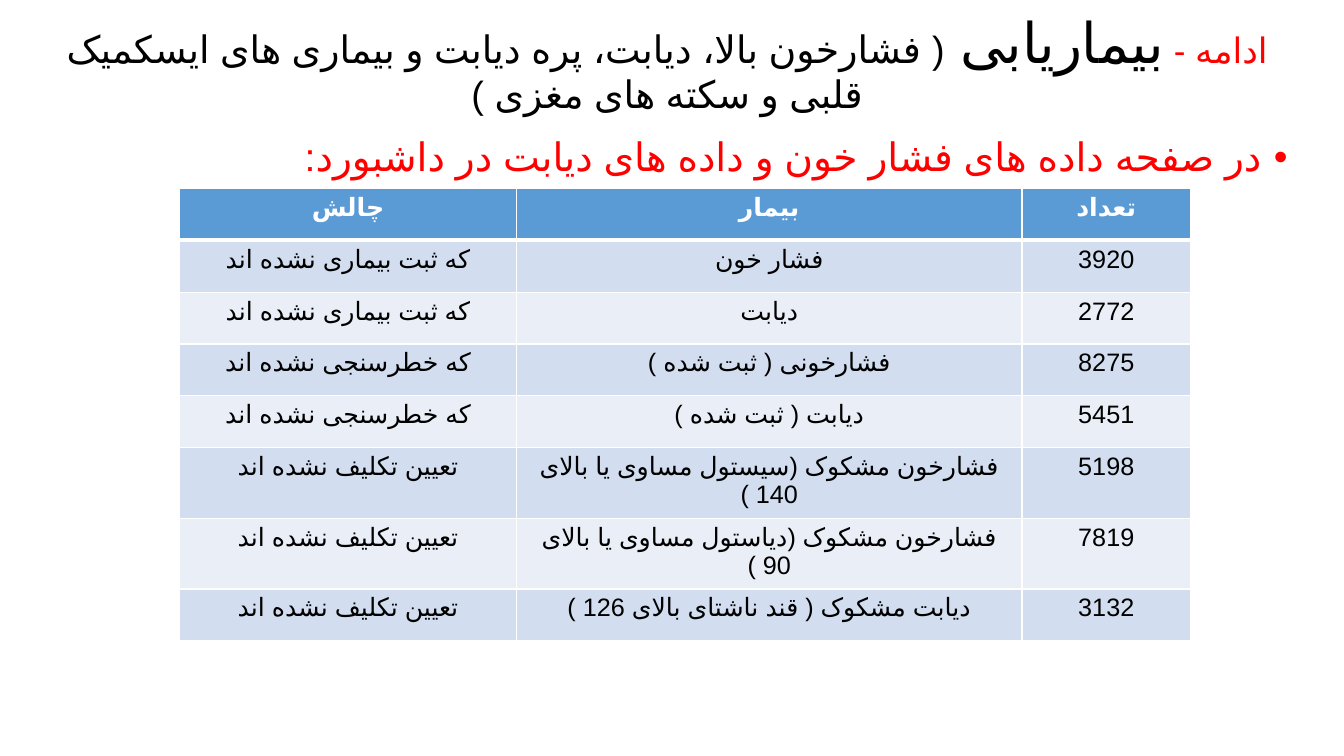
from dataclasses import dataclass
from lxml.etree import SubElement as Sub
from pptx import Presentation
from pptx.dml.color import RGBColor as RGB
from pptx.enum.text import MSO_ANCHOR as Anchor, PP_ALIGN as Align
from pptx.oxml.ns import qn
from pptx.util import Pt


@dataclass(frozen=True)
class Theme:
    """Colours, fonts, language and type sizes of the slide."""
    font: str = "Calibri"
    script: str = "Arial"
    lang: str = "fa-IR"
    red: str = "FF0000"
    black: str = "000000"
    white: str = "FFFFFF"
    head: str = "5B9BD5"
    bands: tuple = ("D2DEEF", "EAEFF7")
    lead: int = 25
    title: int = 40
    note: int = 27
    body: int = 28
    cell: int = 18


LOOK = Theme()
WIDE, HIGH = 960, 540
TITLE = (
    ("ادامه - ", LOOK.lead, LOOK.red),
    ("بیماریابی ", LOOK.title, LOOK.black),
    ("( فشارخون بالا، دیابت، پره دیابت و بیماری های ایسکمیک قلبی و سکته های مغزی )",
     LOOK.note, LOOK.black),
)
POINT = "در صفحه داده های فشار خون و داده های دیابت در داشبورد:"
SIGN, RISK, DUTY = ("که ثبت بیماری نشده اند", "که خطرسنجی نشده اند",
                    "تعیین تکلیف نشده اند")
ROWS = (
    ("چالش", "بیمار", "تعداد"),
    (SIGN, "فشار خون", "3920"),
    (SIGN, "دیابت", "2772"),
    (RISK, "فشارخونی ( ثبت شده )", "8275"),
    (RISK, "دیابت ( ثبت شده )", "5451"),
    (DUTY, "فشارخون مشکوک (سیستول مساوی یا بالای 140 )", "5198"),
    (DUTY, "فشارخون مشکوک (دیاستول مساوی یا بالای 90 )", "7819"),
    (DUTY, "دیابت مشکوک ( قند ناشتای بالای 126 )", "3132"),
)
SHARES = (2, 3, 1)


def style(font, size, color, bold=False):
    """Set the faces, language, size, colour and weight of a font."""
    font.name, font.size, font.bold = LOOK.font, Pt(size), bold
    font.color.rgb = RGB.from_string(color)
    font._rPr.set("lang", LOOK.lang)
    Sub(font._rPr, qn("a:cs"), typeface=LOOK.script)


def add_box(slide, box, anchor):
    """Add a wrapping text box and return its first paragraph."""
    frame = slide.shapes.add_textbox(*map(Pt, box)).text_frame
    frame.word_wrap, frame.vertical_anchor = True, anchor
    para = frame.paragraphs[0]
    para.line_spacing = 0.9
    return para


def add_title(slide, box):
    """Place the centred title with its three sizes of type."""
    para = add_box(slide, box, Anchor.MIDDLE)
    para.alignment = Align.CENTER
    for text, size, color in TITLE:
        run = para.add_run()
        run.text = text
        style(run.font, size, color)


def add_point(slide, box):
    """Place the right-to-left bullet line."""
    para = add_box(slide, box, Anchor.TOP)
    para.text, para.alignment, para.space_before = POINT, Align.RIGHT, Pt(10)
    style(para.font, LOOK.body, LOOK.red)
    props = para._p.get_or_add_pPr()
    for key, value in (("rtl", "1"), ("marL", Pt(18)), ("marR", "0"), ("indent", -Pt(18))):
        props.set(key, str(value))
    face = props.makeelement(qn("a:buFont"), {"typeface": "Arial"})
    mark = props.makeelement(qn("a:buChar"), {"char": "•"})
    spot = list(props).index(props.find(qn("a:defRPr")))
    props[spot:spot] = [face, mark]


def add_edges(cell, head):
    """Draw white cell borders, with a thick one under the header."""
    props = cell._tc.get_or_add_tcPr()
    for side in "LRTB":
        width = 3 if head and side == "B" else 1
        line = Sub(props, qn(f"a:ln{side}"), w=str(Pt(width)))
        Sub(Sub(line, qn("a:solidFill")), qn("a:srgbClr"), val=LOOK.white)


def fill_cell(cell, text, row):
    """Write and colour one cell according to its row."""
    head = row == 0
    add_edges(cell, head)
    cell.fill.solid()
    color = LOOK.head if head else LOOK.bands[(row - 1) % 2]
    cell.fill.fore_color.rgb = RGB.from_string(color)
    para = cell.text_frame.paragraphs[0]
    para.text, para.alignment = text, Align.CENTER
    para._p.get_or_add_pPr().set("rtl", "1")
    style(para.font, LOOK.cell, LOOK.white if head else LOOK.black, head)


def add_grid(slide, box):
    """Place the table of patients, with columns shared by rule."""
    frame = slide.shapes.add_table(len(ROWS), len(SHARES), *map(Pt, box))
    grid = frame.table
    for col, share in zip(grid.columns, SHARES):
        col.width = Pt(box[2] * share / sum(SHARES))
    for row, texts in enumerate(ROWS):
        for col, text in enumerate(texts):
            fill_cell(grid.cell(row, col), text, row)


def main():
    """Build the slide and save it."""
    deck = Presentation()
    deck.slide_width, deck.slide_height = Pt(WIDE), Pt(HIGH)
    slide = deck.slides.add_slide(deck.slide_layouts[6])
    add_title(slide, (14.4, 0, 924.5, 94.3))
    add_point(slide, (9.4, 95, 917.3, 445))
    add_grid(slide, (128.2, 134.6, 722.2, 296.6))
    deck.save("out.pptx")


if __name__ == "__main__":
    main()
